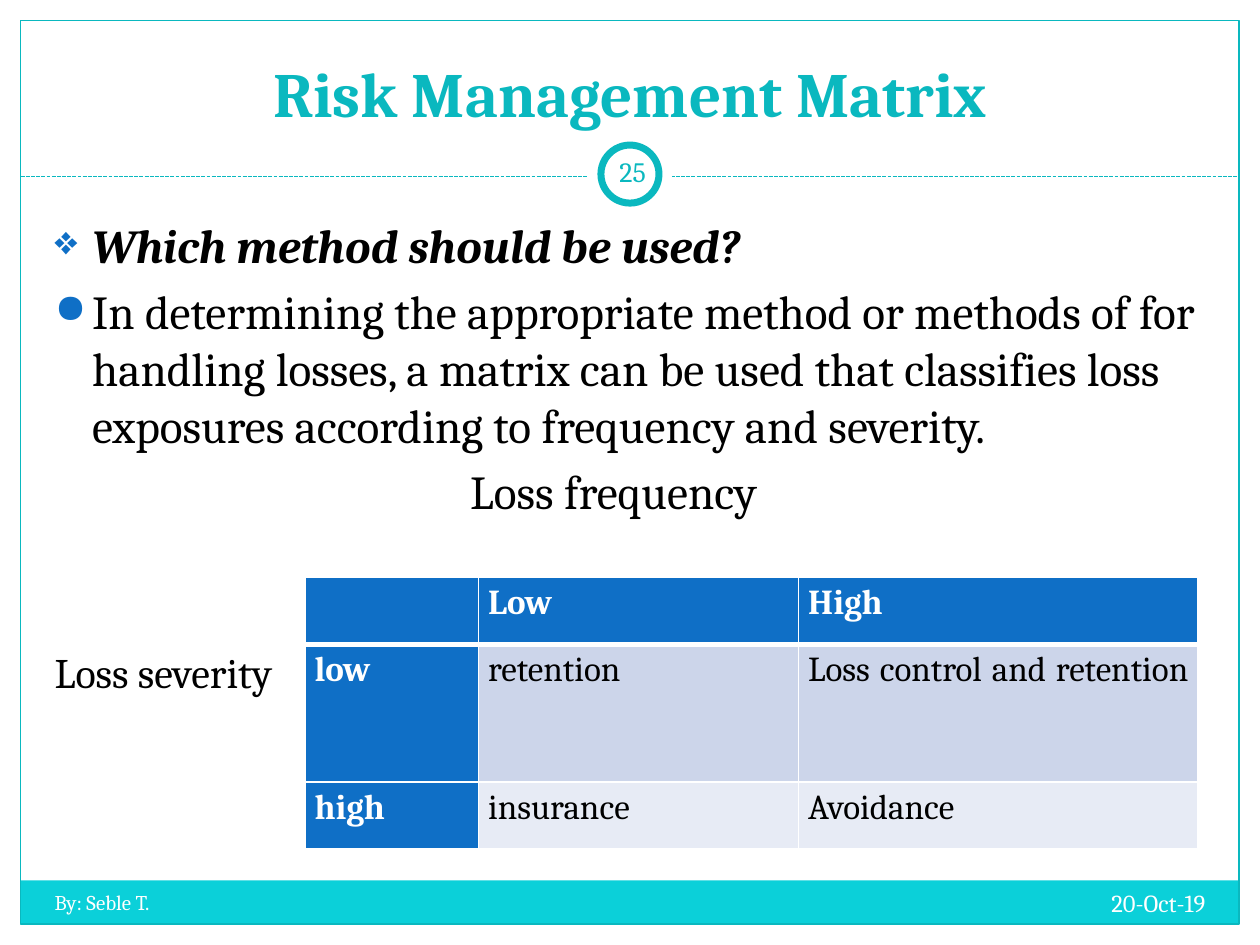
import pptx
import pptx.dml.color
import pptx.enum.dml
import pptx.enum.shapes
import pptx.enum.text
import pptx.oxml
import pptx.oxml.ns
import pptx.util
from lxml import etree

Cm, Pt = pptx.util.Cm, pptx.util.Pt
SHAPE = pptx.enum.shapes.MSO_SHAPE
ALIGN = pptx.enum.text.PP_ALIGN
ANCHOR = pptx.enum.text.MSO_ANCHOR

FONT = "Cambria"
COLORS = {"teal": "0AB8BF", "band": "0BD0D9", "blue": "0F6FC6", "white": "FFFFFF",
          "black": "000000", "odd": "CCD5EA", "even": "E7EBF5"}
TITLE = "Risk Management Matrix"
BODY = [
    ("Which method should be used?", "❖", {"bold": True, "italic": True}),
    ("In determining the appropriate method or methods of for handling losses, "
     "a matrix can be used that classifies loss exposures according to frequency "
     "and severity.", "●", {}),
    ("Loss frequency", None, {}),
]
SEVERITY = "Loss severity"
MATRIX = [
    ["", "Low", "High"],
    ["low", "retention", "Loss control and retention "],
    ["high", "insurance", "Avoidance"],
]
COLUMN_WIDTHS = [3.5, 6.45, 8.05]
ROW_HEIGHTS = [1.35, 2.77, 1.35]
EDGE, WIDTH, HEIGHT = 0.42, 25.4, 19.05
RULE_Y = 3.56
BODY_INDENT, FREQUENCY_INDENT = 0.76, 8.38


def rgb(name):
    return pptx.dml.color.RGBColor.from_string(COLORS[name])


def write(paragraph, text, size, color="black", bold=False, italic=False, align=ALIGN.LEFT):
    paragraph.alignment = align
    run = paragraph.add_run()
    run.text = text
    run.font.name, run.font.size = FONT, Pt(size)
    run.font.bold, run.font.italic = bold, italic
    run.font.color.rgb = rgb(color)


def add_text_box(slide, left, top, width, height, inset=(0.25, 0.13), anchor=ANCHOR.TOP):
    frame = slide.shapes.add_textbox(Cm(left), Cm(top), Cm(width), Cm(height)).text_frame
    frame.word_wrap = True
    frame.vertical_anchor = anchor
    frame.margin_left = frame.margin_right = Cm(inset[0])
    frame.margin_top = frame.margin_bottom = Cm(inset[1])
    return frame


def add_figure(slide, kind, left, top, width, height, fill=None, line=None, weight=0.75):
    figure = slide.shapes.add_shape(kind, Cm(left), Cm(top), Cm(width), Cm(height))
    figure.shadow.inherit = False
    if fill:
        figure.fill.solid()
        figure.fill.fore_color.rgb = rgb(fill)
    else:
        figure.fill.background()
    if line:
        figure.line.color.rgb = rgb(line)
        figure.line.width = Pt(weight)
    else:
        figure.line.fill.background()


def set_indent(paragraph, left, first=0.0, bullet=None):
    properties = paragraph._p.get_or_add_pPr()
    properties.set("marL", str(Cm(left)))
    properties.set("indent", str(Cm(first)))
    if bullet:
        color = etree.SubElement(properties, pptx.oxml.ns.qn("a:buClr"))
        etree.SubElement(color, pptx.oxml.ns.qn("a:srgbClr"), val=COLORS["blue"])
        etree.SubElement(properties, pptx.oxml.ns.qn("a:buSzPct"), val="85000")
        etree.SubElement(properties, pptx.oxml.ns.qn("a:buChar"), char=bullet)


def set_borders(cell, bottom_weight, top_weight):
    """Draw white borders; must run before the cell is filled."""
    properties = cell._tc.get_or_add_tcPr()
    for side, weight in (("L", 1), ("R", 1), ("T", top_weight), ("B", bottom_weight)):
        border = etree.SubElement(properties, pptx.oxml.ns.qn(f"a:ln{side}"), w=str(Pt(weight)))
        fill = etree.SubElement(border, pptx.oxml.ns.qn("a:solidFill"))
        etree.SubElement(fill, pptx.oxml.ns.qn("a:srgbClr"), val=COLORS["white"])


def add_frame(slide):
    inner_width = WIDTH - 2 * EDGE
    add_figure(slide, SHAPE.RECTANGLE, EDGE, 17.75, inner_width, 0.87, fill="band")
    add_figure(slide, SHAPE.RECTANGLE, EDGE, EDGE, inner_width, HEIGHT - 2 * EDGE, line="teal")
    rule = slide.shapes.add_connector(pptx.enum.shapes.MSO_CONNECTOR.STRAIGHT, Cm(EDGE),
                                      Cm(RULE_Y), Cm(WIDTH - EDGE), Cm(RULE_Y))
    rule.line.color.rgb = rgb("teal")
    rule.line.width = Pt(0.75)
    rule.line.dash_style = pptx.enum.dml.MSO_LINE.SQUARE_DOT
    etree.SubElement(rule._element.spPr, pptx.oxml.ns.qn("a:effectLst"))
    for diameter, line in ((1.7, None), (1.17, "teal")):
        add_figure(slide, SHAPE.OVAL, (WIDTH - diameter) / 2, 3.51 - diameter / 2,
                   diameter, diameter, fill="white", line=line, weight=4)


def add_matrix(slide):
    table = slide.shapes.add_table(len(MATRIX), len(MATRIX[0]), Cm(6.15), Cm(11.64),
                                   Cm(sum(COLUMN_WIDTHS)), Cm(sum(ROW_HEIGHTS))).table
    for column, width in zip(table.columns, COLUMN_WIDTHS):
        column.width = Cm(width)
    for r, (labels, height) in enumerate(zip(MATRIX, ROW_HEIGHTS)):
        table.rows[r].height = Cm(height)
        for c, label in enumerate(labels):
            cell = table.cell(r, c)
            heading = r == 0 or c == 0
            set_borders(cell, 3 if r == 0 else 1, 3 if r == 1 else 1)
            cell.fill.solid()
            cell.fill.fore_color.rgb = rgb("blue" if heading else "odd" if r % 2 else "even")
            cell.margin_left = cell.margin_right = Cm(0.19)
            cell.margin_top = cell.margin_bottom = 0
            if label:
                paragraph = cell.text_frame.paragraphs[0]
                write(paragraph, label, 20, color="white" if heading else "black",
                      bold=heading, align=ALIGN.JUSTIFY)
                paragraph.line_spacing = 1.15


def main():
    deck = pptx.Presentation()
    deck.slide_width, deck.slide_height = Cm(WIDTH), Cm(HEIGHT)
    slide = deck.slides.add_slide(deck.slide_layouts[5])
    add_frame(slide)

    title = slide.shapes.title
    title.left, title.top, title.width, title.height = Cm(0.85), Cm(0.64), Cm(23.7), Cm(2.12)
    title.text_frame.vertical_anchor = ANCHOR.BOTTOM
    write(title.text_frame.paragraphs[0], TITLE, 36, color="teal", bold=True, align=ALIGN.CENTER)

    date = add_text_box(slide, 16.09, 17.78, 8.46, 1.02)
    write(date.paragraphs[0], "20-Oct-19", 14, color="white", align=ALIGN.RIGHT)
    author = add_text_box(slide, 0.85, 17.81, 9.95, 1.02)
    write(author.paragraphs[0], "By: Seble T.", 12, color="white")
    number = add_text_box(slide, 12.12, 2.84, 1.27, 1.22, inset=(0.13, 0.13), anchor=ANCHOR.MIDDLE)
    write(number.paragraphs[0], "25", 16, color="teal", align=ALIGN.CENTER)

    body = add_text_box(slide, 0.85, 4.23, 23.62, 6.6)
    for i, (text, bullet, style) in enumerate(BODY):
        paragraph = body.add_paragraph() if i else body.paragraphs[0]
        write(paragraph, text, 27, **style)
        paragraph.space_before = Pt(5.4)
        if bullet:
            set_indent(paragraph, BODY_INDENT, -BODY_INDENT, bullet)
        else:
            set_indent(paragraph, FREQUENCY_INDENT)
    severity = add_text_box(slide, 0.85, 12.9, 5.2, 1.3)
    write(severity.paragraphs[0], SEVERITY, 24)

    add_matrix(slide)
    deck.save("out.pptx")


if __name__ == "__main__":
    main()
